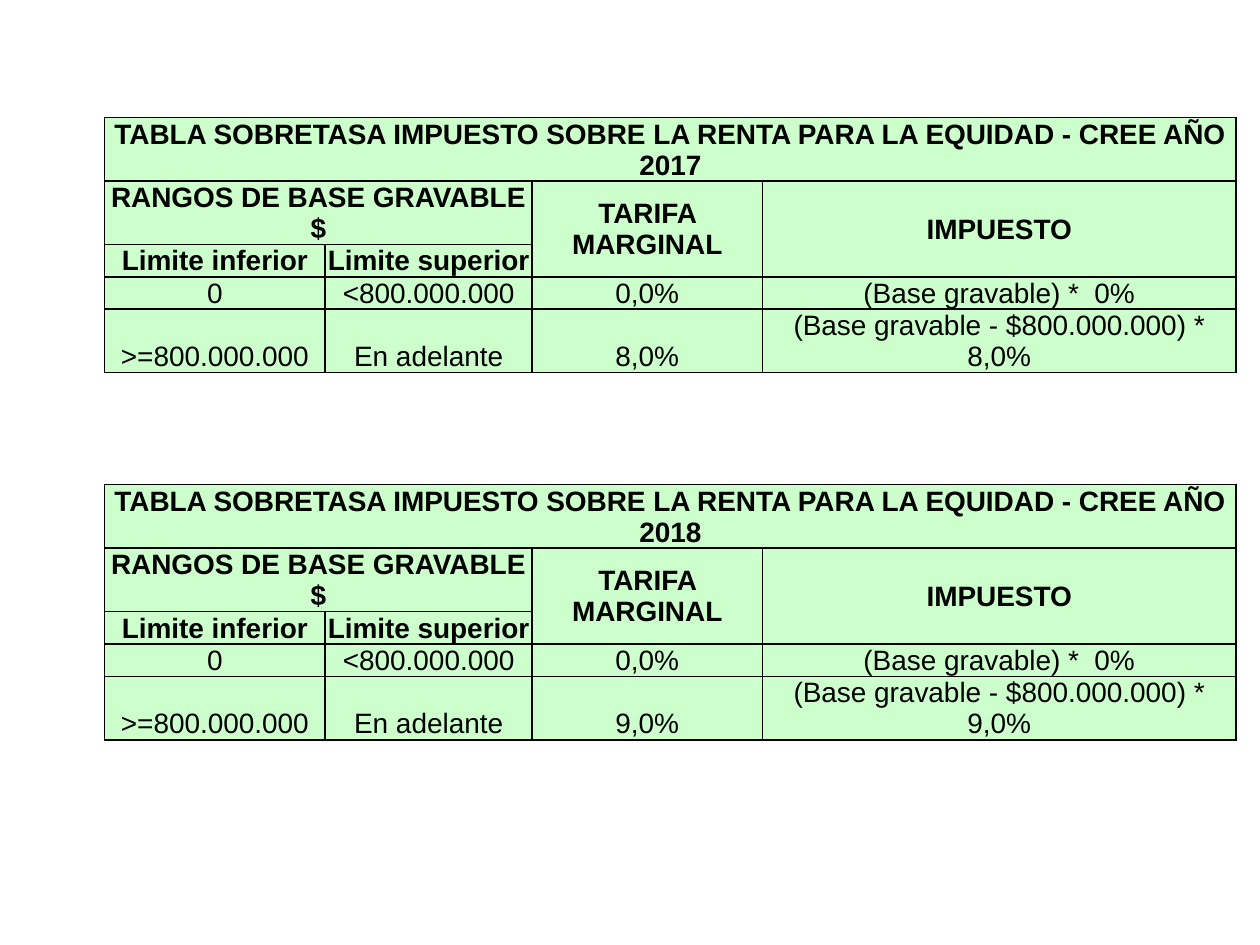
from dataclasses import dataclass

from lxml.etree import SubElement as Sub
from pptx import Presentation
from pptx.dml.color import RGBColor
from pptx.enum.text import MSO_ANCHOR as Anchor, PP_ALIGN as Align
from pptx.oxml.ns import qn
from pptx.util import Pt

BLACK, GREEN = "000000", "CCFFCC"
LEFT, HIGH = 59.8, 157.68
COLS = (126, 118.3, 131.5, 270.8)
ROW = 15.84
HEADS = 3  # bold heading rows
SPANS = ((0, 0, 0, 3), (1, 0, 1, 1), (1, 2, 2, 2), (1, 3, 2, 3))
PADS = {"margin_left": Pt(0.7), "margin_right": Pt(0.7),
        "margin_top": Pt(0.7), "margin_bottom": Pt(0)}
FONT = {"name": "Arial", "size": Pt(16)}


@dataclass
class Tax:
    year: int
    rate: str
    top: float

    def rows(self) -> list[list[str]]:
        return [
            [f"TABLA SOBRETASA IMPUESTO SOBRE LA RENTA PARA LA EQUIDAD - CREE AÑO {self.year}",
             "", "", ""],
            ["RANGOS DE BASE GRAVABLE $", "", "TARIFA MARGINAL", "IMPUESTO"],
            ["Limite inferior", "Limite superior", "", ""],
            ["0", "<800.000.000", "0,0%", "(Base gravable) *  0%"],
            [">=800.000.000", "En adelante", self.rate,
             f"(Base gravable - $800.000.000) * {self.rate}"],
        ]


TAXES = (Tax(2017, "8,0%", 67.2), Tax(2018, "9,0%", 277))


def color(code: str) -> RGBColor:
    return RGBColor.from_string(code)


def put(item: object, vals: dict) -> None:
    for key, val in vals.items():
        setattr(item, key, val)


def edge(cell) -> None:
    """Rule all four sides of a cell."""
    props = cell._tc.get_or_add_tcPr()
    for side in ("L", "R", "T", "B"):
        line = Sub(props, qn(f"a:ln{side}"), w=str(Pt(1)))
        fill = Sub(line, qn("a:solidFill"))
        Sub(fill, qn("a:srgbClr"), val=BLACK)


def style(cell, text: str, head: bool) -> None:
    edge(cell)
    cell.fill.solid()
    cell.fill.fore_color.rgb = color(GREEN)
    put(cell, PADS)
    cell.vertical_anchor = Anchor.MIDDLE if head else Anchor.BOTTOM
    para = cell.text_frame.paragraphs[0]
    para.alignment = Align.CENTER
    if text:
        run = para.add_run()
        run.text = text
        put(run.font, FONT | {"bold": head})
        run.font.color.rgb = color(BLACK)


def draw(slide, tax: Tax) -> None:
    rows = tax.rows()
    frame = slide.shapes.add_table(len(rows), len(COLS), Pt(LEFT), Pt(tax.top),
                                   Pt(sum(COLS)), Pt(HIGH))
    table = frame.table
    put(table, {"first_row": False, "horz_banding": False})
    for col, wide in zip(table.columns, COLS):
        col.width = Pt(wide)
    for row in table.rows:
        row.height = Pt(ROW)
    frame.height = Pt(HIGH)

    # Cell text and look
    for r, row in enumerate(rows):
        for c, text in enumerate(row):
            style(table.cell(r, c), text, r < HEADS)

    # Joined heading cells
    for r1, c1, r2, c2 in SPANS:
        table.cell(r1, c1).merge(table.cell(r2, c2))


def main() -> None:
    deck = Presentation()
    put(deck, {"slide_width": Pt(720), "slide_height": Pt(540)})
    slide = deck.slides.add_slide(deck.slide_layouts[6])
    for tax in TAXES:
        draw(slide, tax)
    deck.save("out.pptx")


if __name__ == "__main__":
    main()
